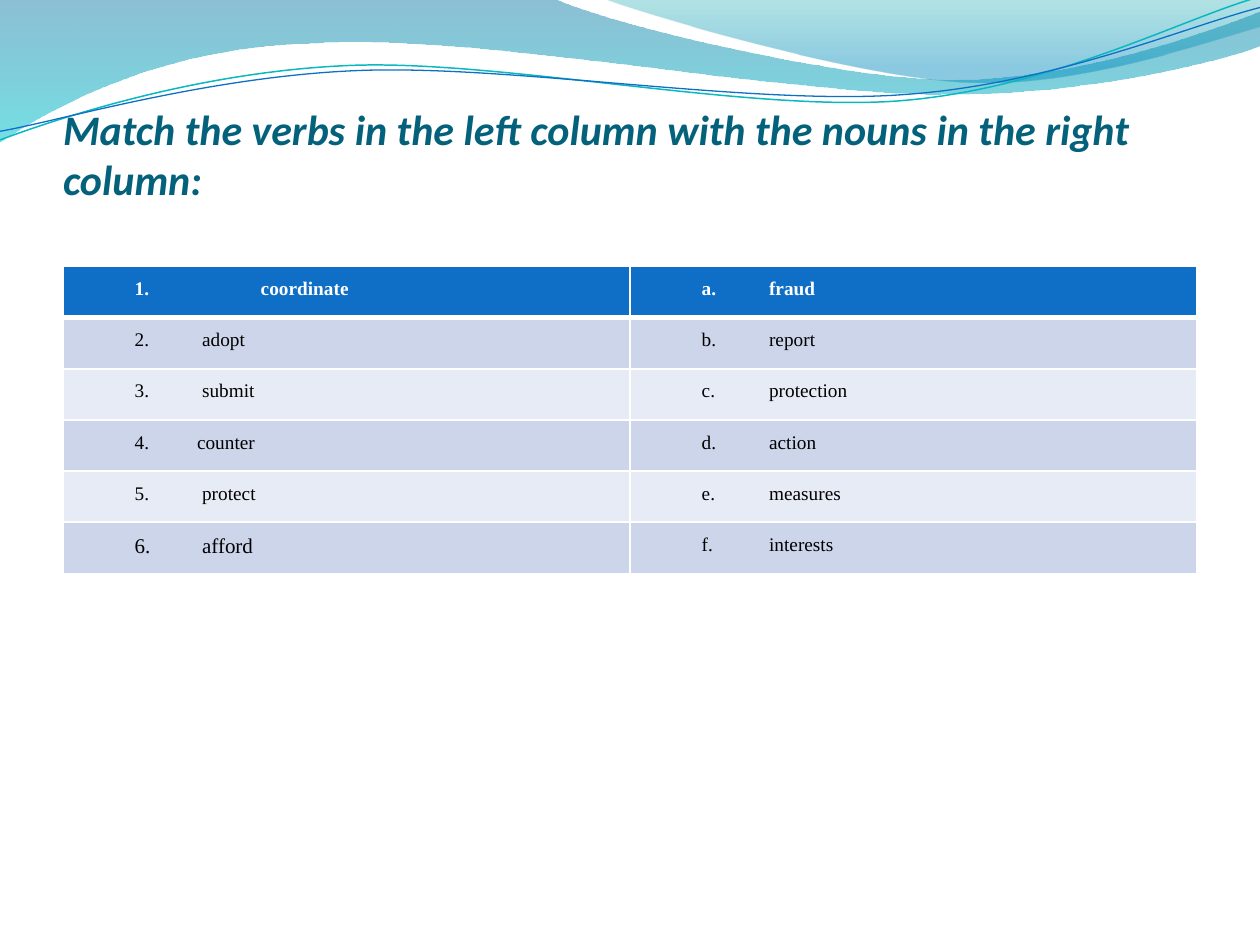
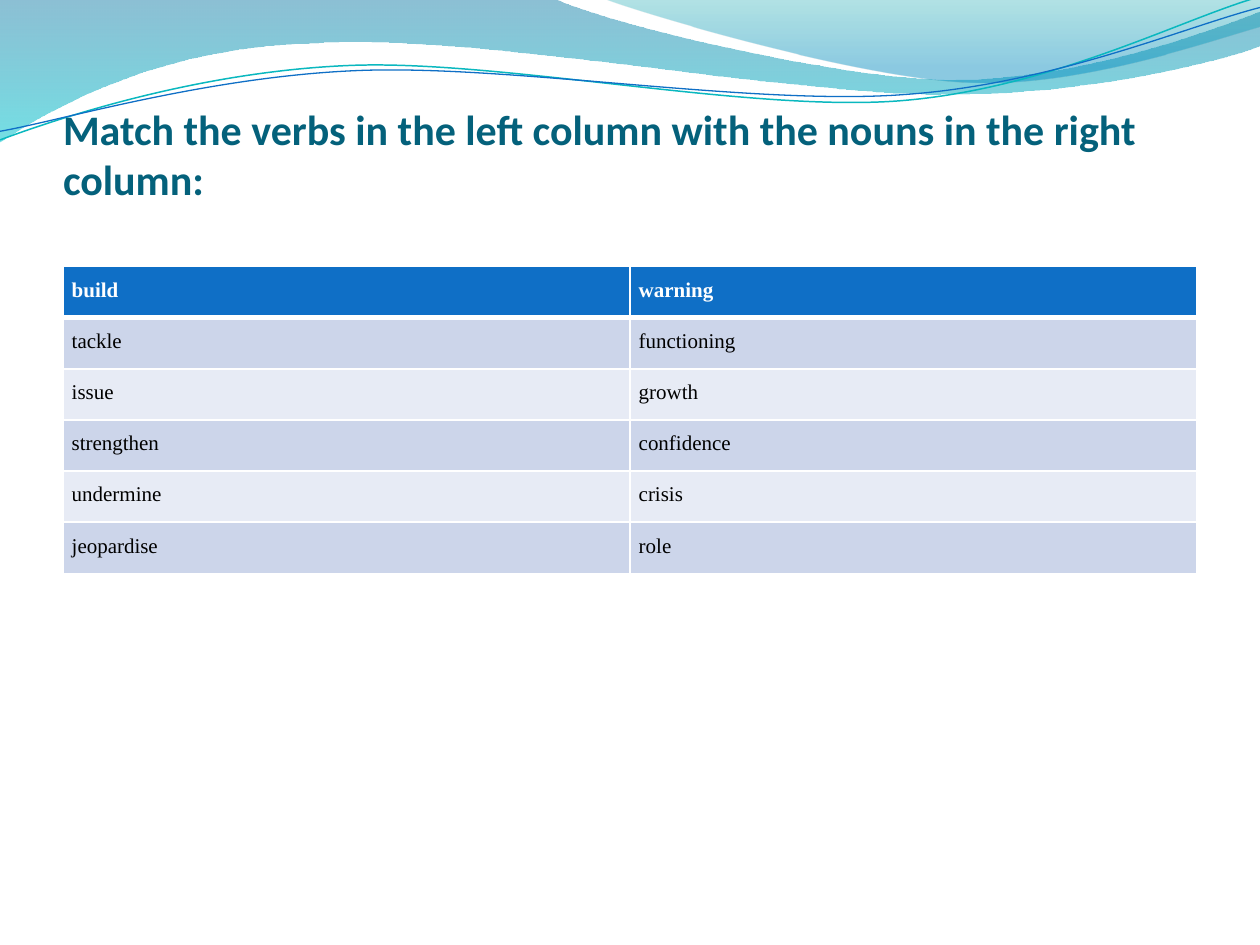
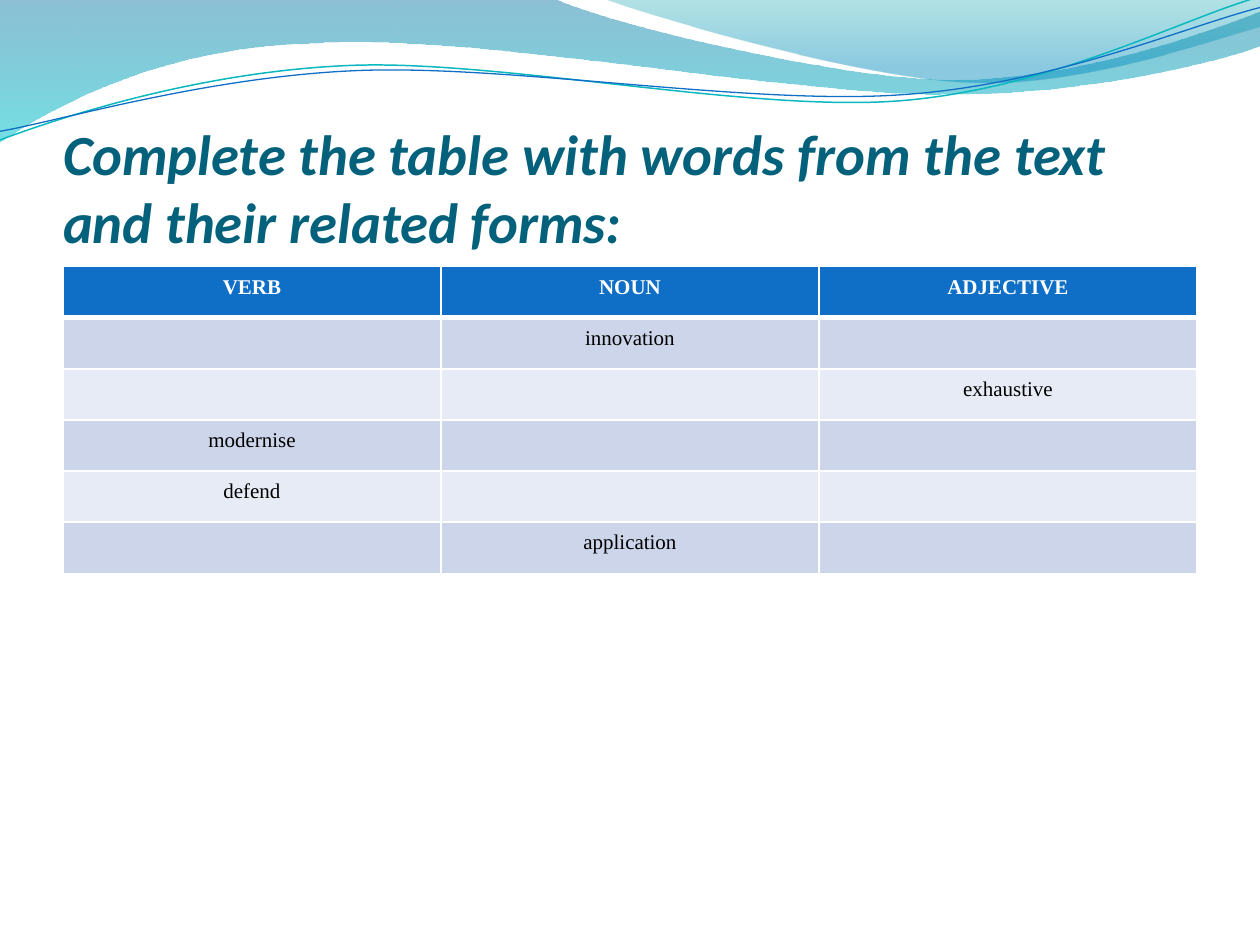
from pptx import Presentation
from pptx.dml.color import RGBColor as Rgb
from pptx.enum.text import MSO_ANCHOR as Anchor, MSO_AUTO_SIZE as Fit, PP_ALIGN as Align
from pptx.oxml.ns import qn
from pptx.util import Pt
from lxml.etree import SubElement as Sub

HEX = {
    "white": "FFFFFF", "black": "000000", "title": "04617B", "head": "0F6FC6",
    "odd": "CCD5EA", "even": "E7EBF5", "teal": "0AB8BF",
    "deep": "0074A1", "cyan": "00C6CF", "sea": "00A1A9", "sky": "008BBF",
}
PAGE = (0, 0, 720, 540)
TITLE = (36, 55.8, 648, 90)
GRID = (36, 152.4, 648, 175.2)
SANS, SERIF = "Calibri", "Times New Roman"
TILT = 357.3

BANDS = [
    ((0, 0), [(316.8, -0.7), (342.7, 12.2, 478.1, 45.4, 545.8, 45.4),
              (614.2, 45.4, 689.8, 18.7, 720, 6.5), (720.7, 25.9),
              (707.8, 31.7, 626.4, 54.7, 537.1, 54),
              (447.8, 54, 275, 20.2, 185, 24.5),
              (92.9, 25.9, 33.1, 59.8, -0.7, 81.4), (0, 0)],
     [(0, "deep", 45), (1, "cyan", 55)]),
    ((344.9, -0.7), [(366.5, 7.9, 491, 44.6, 553.7, 46.8),
                     (616.3, 49.7, 691.9, 23, 720, 15.1), (720, 0),
                     (344.9, -0.7)],
     [(0, "sea", 30), (0.8, "sky", 45)]),
]
CURVES = [
    ((-1.4, 63), [(33.8, 51.7, 114.1, 29.4, 199.8, 29.9),
                  (284.9, 30.3, 425.8, 67.3, 512.4, 64.9),
                  (599, 62.4, 676.5, 25.7, 720.2, 15.5)], "teal", 0.85),
    ((-1.1, 58), [(32.9, 53.8, 118.3, 32.5, 204.1, 33),
                  (290.6, 33.4, 428.9, 63.8, 515.5, 61.4),
                  (601.3, 59.6, 678.5, 30.1, 721.4, 21.3)], "head", 0.75),
]

MATCH = "Match the verbs in the left column with the nouns in the right column:"
FORMS = "Complete the table with words from the text and their related forms:"
PAIRS = [
    ("1.\tcoordinate", "a.\tfraud"), ("2.\tadopt", "b.\treport"),
    ("3.\tsubmit", "c.\tprotection"), ("4.\tcounter", "d.\taction"),
    ("5.\tprotect", "e.\tmeasures"), ("6.\tafford", "f.\tinterests"),
]
WORDS = [
    ("build", "warning"), ("tackle", "functioning"), ("issue", "growth"),
    ("strengthen", "confidence"), ("undermine", "crisis"), ("jeopardise", "role"),
]
FAMILY = [
    ("VERB", "NOUN", "ADJECTIVE"), ("", "innovation", ""), ("", "", "exhaustive"),
    ("modernise", "", ""), ("defend", "", ""), ("", "application", ""),
]


def color(name):
    """Return the named colour."""
    return Rgb.from_string(HEX[name])


def style(font, face, size, tint, bold, slant=False):
    """Set every trait of a font."""
    font.name, font.size, font.bold, font.italic = face, Pt(size), bold, slant
    font.color.rgb = color(tint)


def bend(shape, box, parts):
    """Turn the lines that have control points into cubic curves."""
    trail = next(shape.element.iter(qn("a:path")))
    for node, part in zip(trail.findall(qn("a:lnTo")), parts):
        if len(part) == 2:
            continue
        node.tag = qn("a:cubicBezTo")
        node.remove(node[0])
        for x, y in zip(part[::2], part[1::2]):
            Sub(node, qn("a:pt"), x=str(Pt(box[0] + x) - shape.left),
                y=str(Pt(box[1] + y) - shape.top))


def outline(slide, box, start, parts, close):
    """Draw one outline relative to the box."""
    spots = [(Pt(box[0] + p[-2]), Pt(box[1] + p[-1])) for p in (start, *parts)]
    form = slide.shapes.build_freeform(*spots[0])
    form.add_line_segments(spots[1:], close=close)
    shape = form.convert_to_shape()
    shape.shadow.inherit = False
    bend(shape, box, parts)
    return shape


def band(slide, box, start, parts, stops):
    """Draw a wave with a see-through gradient from top to bottom."""
    shape = outline(slide, box, start, parts, True)
    shape.line.fill.background()
    shape.fill.gradient()
    shape.fill.gradient_angle = 270
    for stop, (place, tint, _) in zip(shape.fill.gradient_stops, stops):
        stop.position, stop.color.rgb = place, color(tint)
    for node, (_, _, alpha) in zip(shape.element.iter(qn("a:srgbClr")), stops):
        Sub(node, qn("a:alpha"), val=str(alpha * 1000))
    return shape


def curve(slide, box, start, parts, tint, width):
    """Draw a thin open curve, slightly turned."""
    shape = outline(slide, box, start, parts, False)
    shape.rotation = TILT
    shape.fill.background()
    shape.line.color.rgb, shape.line.width = color(tint), Pt(width)
    return shape


def waves(slide, box):
    """Draw the waves and hand them to the layout of the slide."""
    shapes = [band(slide, box, *item) for item in BANDS]
    shapes += [curve(slide, box, *item) for item in CURVES]
    first = slide.slide_layout.placeholders[0].element
    for num, shape in enumerate(shapes, 20):
        shape.element.nvSpPr.cNvPr.set("id", str(num))
        first.addprevious(shape.element)


def head(slide, box, text, size, slant, foot):
    """Fill the title placeholder, with a gap below the text."""
    title = slide.shapes.title
    title.left, title.top, title.width, title.height = map(Pt, box)
    frame = title.text_frame
    frame.text, frame.word_wrap = text, True
    frame.auto_size, frame.vertical_anchor = Fit.NONE, Anchor.BOTTOM
    frame.margin_left = frame.margin_right = frame.margin_top = 0
    frame.margin_bottom = Pt(foot)
    para = frame.paragraphs[0]
    para.alignment = Align.LEFT
    style(para.font, SANS, size, "title", True, slant)


def edge(cell, top, base):
    """Give a cell white borders."""
    props = cell._tc.get_or_add_tcPr()
    for side, width in zip("LRTB", (1, 1, top, base)):
        line = Sub(props, qn("a:ln" + side), w=str(Pt(width)))
        Sub(Sub(line, qn("a:solidFill")), qn("a:srgbClr"), val=HEX["white"])


def indent(para, left, first):
    """Set the left margin and first-line indent."""
    props = para._p.get_or_add_pPr()
    props.set("marL", str(Pt(left)))
    props.set("indent", str(Pt(first)))


def listed(para, row, col):
    """Lay out a label and its word, split by a tab."""
    hang = {(0, 0): 72, (3, 0): 35.6}.get((row, col), 38.5)
    indent(para, 36 + hang, -hang)
    para.line_spacing, para.space_after = 1.15, Pt(8)
    para.font.size = Pt(12 if (row, col) == (5, 0) else 11)


def plain(para, row, col):
    """Lay out a word at the left edge."""
    indent(para, 27.4, -27.4)
    para.line_spacing, para.space_after = 1.15, Pt(8)


def middle(para, row, col):
    """Centre a word."""
    para.alignment = Align.CENTER


def grid(slide, box, rows, layout):
    """Draw a banded table whose words follow the given layout."""
    high, wide = len(rows), len(rows[0])
    table = slide.shapes.add_table(high, wide, *map(Pt, box)).table
    for col in table.columns:
        col.width = Pt(box[2] / wide)
    for r, words in enumerate(rows):
        table.rows[r].height = Pt(box[3] / high)
        for c, word in enumerate(words):
            cell = table.cell(r, c)
            edge(cell, 3 if r == 1 else 1, 3 if r == 0 else 1)
            cell.fill.solid()
            cell.fill.fore_color.rgb = color("head" if r == 0 else "odd" if r % 2 else "even")
            cell.margin_left = cell.margin_right = Pt(5)
            cell.margin_top = cell.margin_bottom = Pt(5)
            cell.text = word
            para = cell.text_frame.paragraphs[0]
            style(para.font, SERIF, 12, "black" if r else "white", r == 0)
            layout(para, r, c)
            if not word:
                Sub(para._p, qn("a:endParaRPr"), sz="1200")


def main():
    """Build the three slides."""
    deck = Presentation()
    deck.slide_width, deck.slide_height = Pt(PAGE[2]), Pt(PAGE[3])
    base = deck.slide_layouts[5]
    plan = [
        ((MATCH, 24, True, 29.3), PAIRS, listed),
        ((MATCH, 24, False, 29.3), WORDS, plain),
        ((FORMS, 32.4, True, 0), FAMILY, middle),
    ]
    for num, (text, rows, layout) in enumerate(plan):
        slide = deck.slides.add_slide(base)
        if num == 0:
            waves(slide, PAGE)
        head(slide, TITLE, *text)
        grid(slide, GRID, rows, layout)
    deck.save("out.pptx")


if __name__ == "__main__":
    main()
